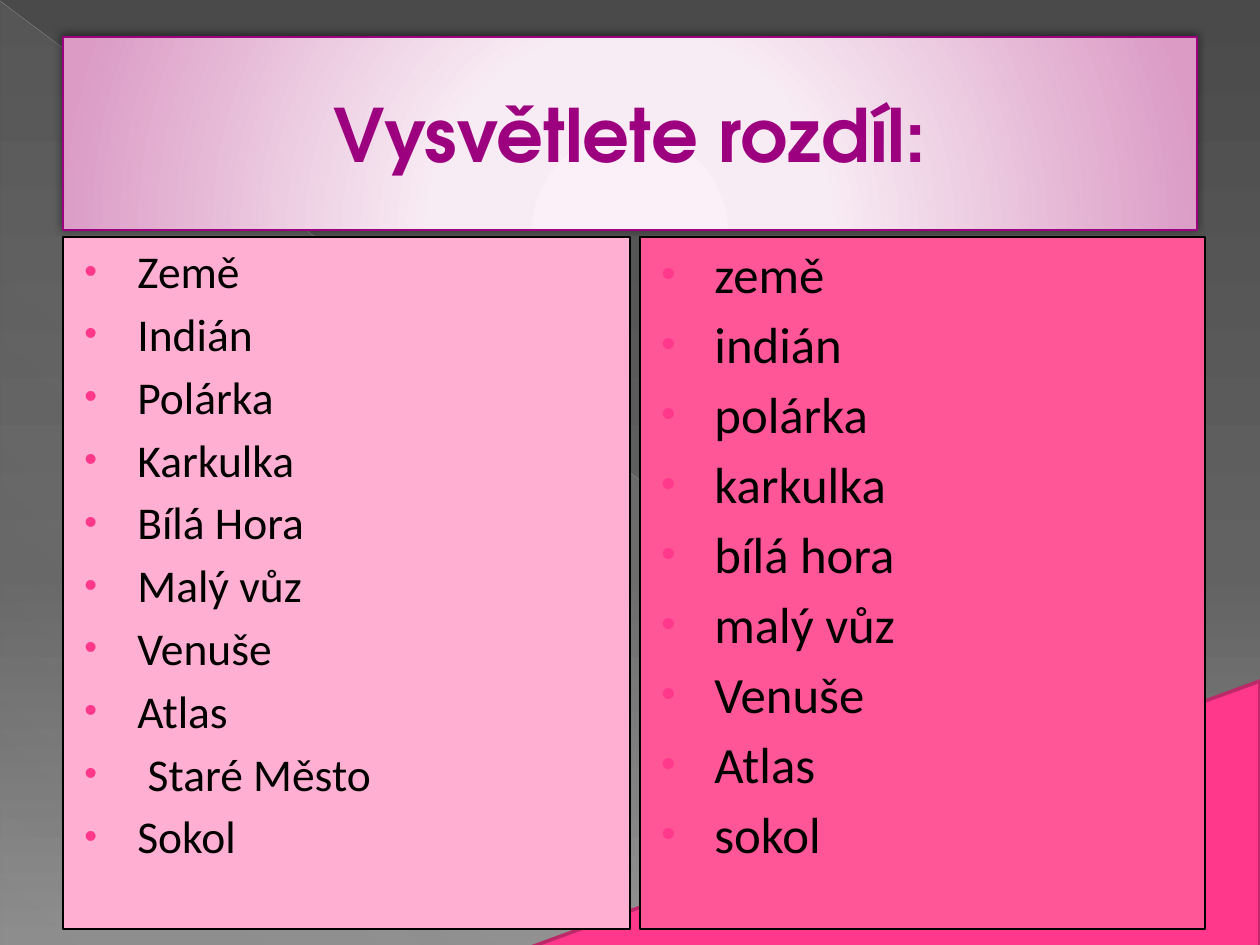
import lxml.etree
import pptx
import pptx.dml.color
import pptx.enum.shapes
import pptx.enum.text
import pptx.oxml
import pptx.oxml.ns
import pptx.util

SHAPES = pptx.enum.shapes.MSO_SHAPE
ALIGN = pptx.enum.text.PP_ALIGN
ANCHOR = pptx.enum.text.MSO_ANCHOR
NAMESPACE = pptx.oxml.ns.nsdecls("a")

THEME = {
    "plum": "9C007F",
    "black": "000000",
    "pink": "FF388C",
    "edge": "BD2968",
    "pale_panel": "FFAFD1",
    "bright_panel": "FF5698",
    "upper_ray": "BFBFBF",
    "lower_ray": "C6C6C6",
    "backdrop": [(0, "4A4A4A", 100), (60, "626262", 100), (100, "8C8C8C", 100)],
    "sheen": [(0, "D2D2D2", 10), (70, "D2D2D2", 8), (100, "D2D2D2", 1)],
    "banner": [(0, "FBF0F7", 100), (34, "F8ECF4", 100), (100, "DB9BC5", 100)],
    "title_font": "TeX Gyre Adventor",
    "body_font": "Calibri",
    "title_size": 42,
    "left_size": 26,
    "right_size": 29,
}
BANNER_GLOW = (
    '<a:path path="circle"><a:fillToRect l="50000" t="155000" '
    'r="50000" b="-55000"/></a:path>'
)


class SlideBuilder:
    """Draw styled elements on the current slide in whole pixels."""

    def __init__(self, theme, width, height):
        self.theme = theme
        self.deck = pptx.Presentation()
        self.deck.slide_width = self.emu(width)
        self.deck.slide_height = self.emu(height)
        self.page = self.deck.slides.add_slide(self.deck.slide_layouts[6])

    def emu(self, pixels):
        return pptx.util.Emu(round(pixels * 914400 / 126))

    def color(self, name):
        return pptx.dml.color.RGBColor.from_string(self.theme[name])

    def apply(self, target, values):
        for name, value in values.items():
            setattr(target, name, value)

    def add_xml(self, parent, markup):
        tag, rest = markup.split(" ", 1)
        parent.append(pptx.oxml.parse_xml(f"{tag} {NAMESPACE} {rest}"))

    def gradient(self, element, stops, direction):
        stop_list = "".join(
            f'<a:gs pos="{position * 1000}"><a:srgbClr val="{color}">'
            f'<a:alpha val="{alpha * 1000}"/></a:srgbClr></a:gs>'
            for position, color, alpha in self.theme[stops]
        )
        fill = pptx.oxml.parse_xml(
            f"<a:gradFill {NAMESPACE}><a:gsLst>{stop_list}</a:gsLst>{direction}</a:gradFill>"
        )
        empty = element.find(pptx.oxml.ns.qn("a:noFill"))
        element.replace(empty, fill)

    def linear(self, degrees):
        return f'<a:lin ang="{degrees * 60000}" scaled="0"/>'

    def background(self, stops):
        self.page.background.fill.background()
        self.gradient(self.page.element.xpath(".//p:bgPr")[0], stops, self.linear(90))

    def shape(self, kind, place, fill=None, stops=None, direction="", line=None, weight=0.75):
        shape = self.page.shapes.add_shape(kind, *map(self.emu, place))
        shape.shadow.inherit = False
        if stops:
            shape.fill.background()
            self.gradient(shape.element.spPr, stops, direction)
        else:
            shape.fill.solid()
            shape.fill.fore_color.rgb = self.color(fill)
        if line:
            shape.line.color.rgb = self.color(line)
            shape.line.width = pptx.util.Pt(weight)
        else:
            shape.line.fill.background()
        return shape

    def ray(self, start, end, color, weight, alpha):
        ray = self.page.shapes.add_connector(
            pptx.enum.shapes.MSO_CONNECTOR.STRAIGHT, *map(self.emu, start + end)
        )
        ray.line.color.rgb = self.color(color)
        ray.line.width = pptx.util.Pt(weight)
        self.add_xml(ray.element.xpath(".//a:srgbClr")[0], f'<a:alpha val="{alpha * 1000}"/>')
        lxml.etree.SubElement(ray.element.spPr, pptx.oxml.ns.qn("a:effectLst"))

    def text(self, para, words, font, size, color, bold=False):
        span = para.add_run()
        span.text = words
        self.apply(
            span.font,
            {"name": self.theme[font], "size": pptx.util.Pt(self.theme[size]), "bold": bold},
        )
        span.font.color.rgb = self.color(color)

    def title(self, place, words):
        box = self.shape(
            SHAPES.RECTANGLE, place, stops="banner", direction=BANNER_GLOW, line="plum"
        )
        self.add_xml(
            box.element.spPr.find(pptx.oxml.ns.qn("a:effectLst")),
            '<a:outerShdw blurRad="63500" dist="25400" dir="14700000" rotWithShape="0">'
            '<a:srgbClr val="000000"><a:alpha val="50000"/></a:srgbClr></a:outerShdw>',
        )
        self.apply(box.text_frame, {"word_wrap": True, "vertical_anchor": ANCHOR.MIDDLE})
        para = box.text_frame.paragraphs[0]
        para.alignment = ALIGN.CENTER
        self.text(para, words, "title_font", "title_size", "plum", True)

    def bullets(self, place, fill, size, items):
        box = self.shape(SHAPES.RECTANGLE, place, fill, line="black")
        frame = box.text_frame
        self.apply(frame, {"word_wrap": True, "vertical_anchor": ANCHOR.TOP})
        spacing = pptx.util.Pt(round(self.theme[size] * 0.18, 1))
        for index, words in enumerate(items):
            para = frame.add_paragraph() if index else frame.paragraphs[0]
            self.apply(para, {"alignment": ALIGN.LEFT, "space_before": spacing})
            layout = para._p.get_or_add_pPr()
            layout.set("marL", str(self.emu(62)))
            layout.set("indent", str(self.emu(-53)))
            self.add_xml(
                layout, f'<a:buClr ><a:srgbClr val="{self.theme["pink"]}"/></a:buClr>'
            )
            self.add_xml(layout, '<a:buSzPct val="80000"/>')
            self.add_xml(layout, '<a:buFont typeface="Arial"/>')
            self.add_xml(layout, '<a:buChar char="•"/>')
            self.text(para, words, "body_font", size, "black")


def main():
    """Build and save the vocabulary slide."""
    slide = SlideBuilder(THEME, 1260, 945)
    slide.background("backdrop")
    slide.shape(
        SHAPES.RIGHT_TRIANGLE, (1, 2, 1258, 943), stops="sheen", direction=slide.linear(133)
    )
    slide.ray((0, 1), (1259, 944), "upper_ray", 0.39, 35)
    slide.ray((1260, 682), (891, 944), "lower_ray", 0.47, 45)
    corner = slide.shape(
        SHAPES.RIGHT_TRIANGLE, (742, 440, 277, 759), "pink", line="edge", weight=2
    )
    corner.rotation = 270
    slide.title((63, 37, 1134, 193), "Vysvětlete rozdíl:")
    proper_names = [
        "Země", "Indián", "Polárka", "Karkulka", "Bílá Hora",
        "Malý vůz", "Venuše", "Atlas", " Staré Město", "Sokol",
    ]
    common_nouns = [
        "země", "indián", "polárka", "karkulka", "bílá hora",
        "malý vůz", "Venuše", "Atlas", "sokol",
    ]
    slide.bullets((63, 237, 567, 692), "pale_panel", "left_size", proper_names)
    slide.bullets((640, 237, 565, 692), "bright_panel", "right_size", common_nouns)
    slide.deck.save("out.pptx")


if __name__ == "__main__":
    main()
